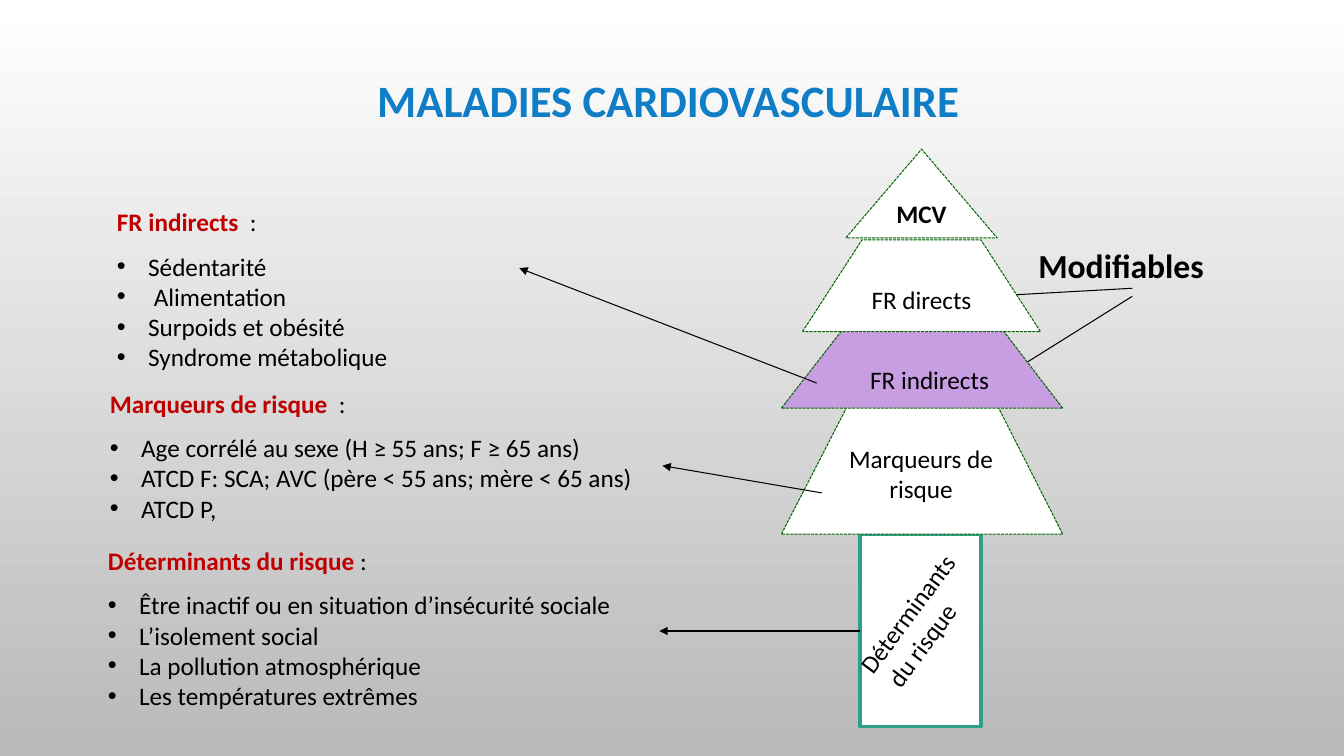
from lxml.etree import SubElement
from pptx import Presentation
from pptx.dml.color import RGBColor
from pptx.enum.dml import MSO_LINE
from pptx.enum.shapes import MSO_CONNECTOR, MSO_SHAPE
from pptx.enum.text import MSO_ANCHOR, MSO_AUTO_SIZE, PP_ALIGN
from pptx.oxml.ns import qn
from pptx.util import Inches, Pt

LISTS = [
    (1.06, 2, 6.26, 1.67, "FR indirects ", " :",
     ["Sédentarité", " Alimentation", "Surpoids et obésité",
      "Syndrome métabolique"]),
    (0.99, 3.8, 6.26, 1.47, "Marqueurs de risque ", " :",
     ["Age corrélé au sexe (H ≥ 55 ans; F ≥ 65 ans)",
      "ATCD F: SCA; AVC (père < 55 ans; mère < 65 ans)", "ATCD P,"]),
    (0.97, 5.36, 6.99, 2, "Déterminants du risque", " :",
     ["Être inactif ou en situation d’insécurité sociale",
      "L’isolement social", "La pollution atmosphérique",
      "Les températures extrêmes"]),
]
TIERS = [
    (7.75, 10.54, 8.45, 9.85, 3.94, 5.3, "FFFFFF"),
    (7.75, 10.54, 8.45, 9.85, 3.15, 4.05, "C89EE3"),
    (7.96, 10.32, 8.55, 9.73, 2.38, 3.29, "FFFFFF"),
]
LABELS = [
    (10.2, 2.38, 2.06, 0.56, ["Modifiables"], PP_ALIGN.LEFT, 24, True, 1, 0),
    (7.99, 2.83, 2.3, 0.35, ["FR directs"], PP_ALIGN.CENTER, 18, False, 0.8, 0),
    (8.15, 3.62, 2.14, 0.35, ["FR indirects"], PP_ALIGN.CENTER, 18, False, 0.8, 0),
    (8.23, 4.35, 1.81, 0.71, ["Marqueurs de risque"], PP_ALIGN.CENTER, 18, False, 1, 0),
    (8.31, 5.79, 1.67, 0.71, ["Déterminants", " du risque"], PP_ALIGN.LEFT, 18, False, 1, 306.6),
]
TIER_ARROWS = [(11.23, 2.94, 9.73, 3.88), (11.23, 2.86, 9.97, 2.93)]
LIST_ARROWS = [(8.1, 3.8, 5.15, 2.66), (8.15, 4.89, 6.57, 4.62),
               (8.53, 6.26, 6.54, 6.26)]


def rgb(color):
    return RGBColor.from_string(color)


def place(sp, left, top, width, height):
    sp.left, sp.top = Inches(left), Inches(top)
    sp.width, sp.height = Inches(width), Inches(height)


def add_run(p, text, size=18, color="000000", bold=False):
    r = p.add_run()
    r.text = text
    r.font.name = "Calibri"
    r.font.size = Pt(size)
    r.font.bold = bold
    r.font.color.rgb = rgb(color)


def set_bullet(p, char=None):
    pPr = p._p.get_or_add_pPr()
    indent = Inches(0.31) if char else 0
    pPr.set("marL", str(indent))
    pPr.set("indent", str(-indent))
    if char:
        SubElement(pPr, qn("a:buFont"), typeface="Arial")
        SubElement(pPr, qn("a:buChar"), char=char)
    else:
        SubElement(pPr, qn("a:buNone"))
    p.alignment = PP_ALIGN.LEFT
    p.space_before = Pt(0)
    p.space_after = Pt(0 if char else 10)


def fill_title(sp):
    place(sp, 0.93, 0.3, 11.5, 1.45)
    tf = sp.text_frame
    tf.auto_size = MSO_AUTO_SIZE.NONE
    tf.vertical_anchor = MSO_ANCHOR.MIDDLE
    p = tf.paragraphs[0]
    p.alignment = PP_ALIGN.CENTER
    p.line_spacing = 0.9
    add_run(p, "MALADIES CARDIOVASCULAIRE ", 32, "107EC6", True)


def fill_list(sp, left, top, width, height, heading, colon, items):
    place(sp, left, top, width, height)
    tf = sp.text_frame
    tf.auto_size = MSO_AUTO_SIZE.NONE
    tf.vertical_anchor = MSO_ANCHOR.TOP
    p = tf.paragraphs[0]
    set_bullet(p)
    add_run(p, heading, color="C00000", bold=True)
    add_run(p, colon)
    for item in items:
        p = tf.add_paragraph()
        set_bullet(p, "•")
        add_run(p, item)


def style_shape(sp, fill, line, width, dash=None):
    sp.shadow.inherit = False
    sp.fill.solid()
    sp.fill.fore_color.rgb = rgb(fill)
    sp.line.color.rgb = rgb(line)
    sp.line.width = Pt(width)
    if dash:
        sp.line.dash_style = dash


def add_preset(s, kind, left, top, width, height, *style):
    sp = s.shapes.add_shape(kind, Inches(left), Inches(top),
                            Inches(width), Inches(height))
    style_shape(sp, *style)
    return sp


def add_tier(s, left, right, top_left, top_right, top, bottom, fill):
    corners = [(left, bottom), (top_left, top), (top_right, top), (right, bottom)]
    points = [(Inches(x), Inches(y)) for x, y in corners]
    builder = s.shapes.build_freeform(*points[0])
    builder.add_line_segments(points[1:], close=True)
    style_shape(builder.convert_to_shape(), fill, "006600", 0.75,
                MSO_LINE.SQUARE_DOT)


def add_arrow(s, x1, y1, x2, y2):
    line = s.shapes.add_connector(MSO_CONNECTOR.STRAIGHT, Inches(x1), Inches(y1),
                                  Inches(x2), Inches(y2))
    line.line.color.rgb = rgb("000000")
    line.line.width = Pt(0.75)
    SubElement(line.line._get_or_add_ln(), qn("a:tailEnd"), type="triangle")
    SubElement(line._element.spPr, qn("a:effectLst"))


def add_label(s, left, top, width, height, lines, align, size, bold, spacing, angle):
    sp = s.shapes.add_textbox(Inches(left), Inches(top), Inches(width), Inches(height))
    sp.rotation = angle
    tf = sp.text_frame
    tf.word_wrap = True
    for i, text in enumerate(lines):
        p = tf.add_paragraph() if i else tf.paragraphs[0]
        p.alignment = align
        p.line_spacing = spacing
        add_run(p, text, size, bold=bold)


def set_background(s):
    fill = s.background.fill
    fill.gradient()
    fill.gradient_angle = 270
    for stop, position, color in zip(fill.gradient_stops, (0, 1), ("FFFFFF", "B9B9B9")):
        stop.position = position
        stop.color.rgb = rgb(color)


def add_tree(s):
    top = add_preset(s, MSO_SHAPE.ISOSCELES_TRIANGLE, 8.39, 1.48, 1.5, 0.88,
                     "FFFFFF", "006600", 0.75, MSO_LINE.SQUARE_DOT)
    top.text_frame.vertical_anchor = MSO_ANCHOR.TOP
    p = top.text_frame.paragraphs[0]
    p.alignment = PP_ALIGN.CENTER
    add_run(p, "MCV", bold=True)
    for arrow in TIER_ARROWS:
        add_arrow(s, *arrow)
    add_preset(s, MSO_SHAPE.RECTANGLE, 8.53, 5.3, 1.2, 1.91, "FFFFFF", "2FA087", 2.25)
    for tier in TIERS:
        add_tier(s, *tier)
    for label in LABELS:
        add_label(s, *label)


def main():
    prs = Presentation()
    prs.slide_width, prs.slide_height = Inches(13.33), Inches(7.5)
    s = prs.slides.add_slide(prs.slide_layouts.get_by_name("Comparison"))
    set_background(s)
    title, *bodies, spare = s.placeholders
    spare._element.getparent().remove(spare._element)
    fill_title(title)
    for body, content in zip(bodies, LISTS):
        fill_list(body, *content)
    add_tree(s)
    for arrow in LIST_ARROWS:
        add_arrow(s, *arrow)
    prs.save("out.pptx")


if __name__ == "__main__":
    main()
